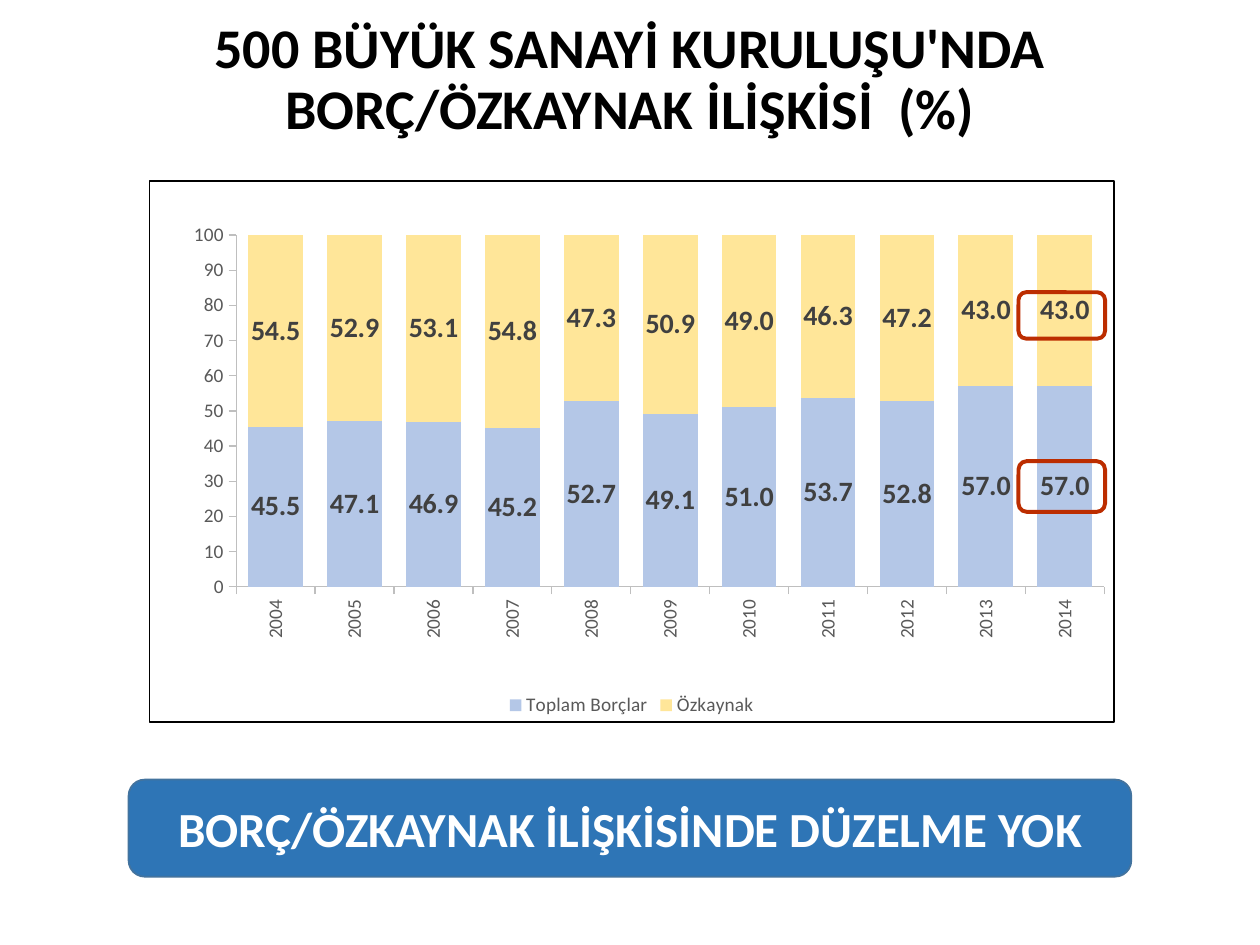
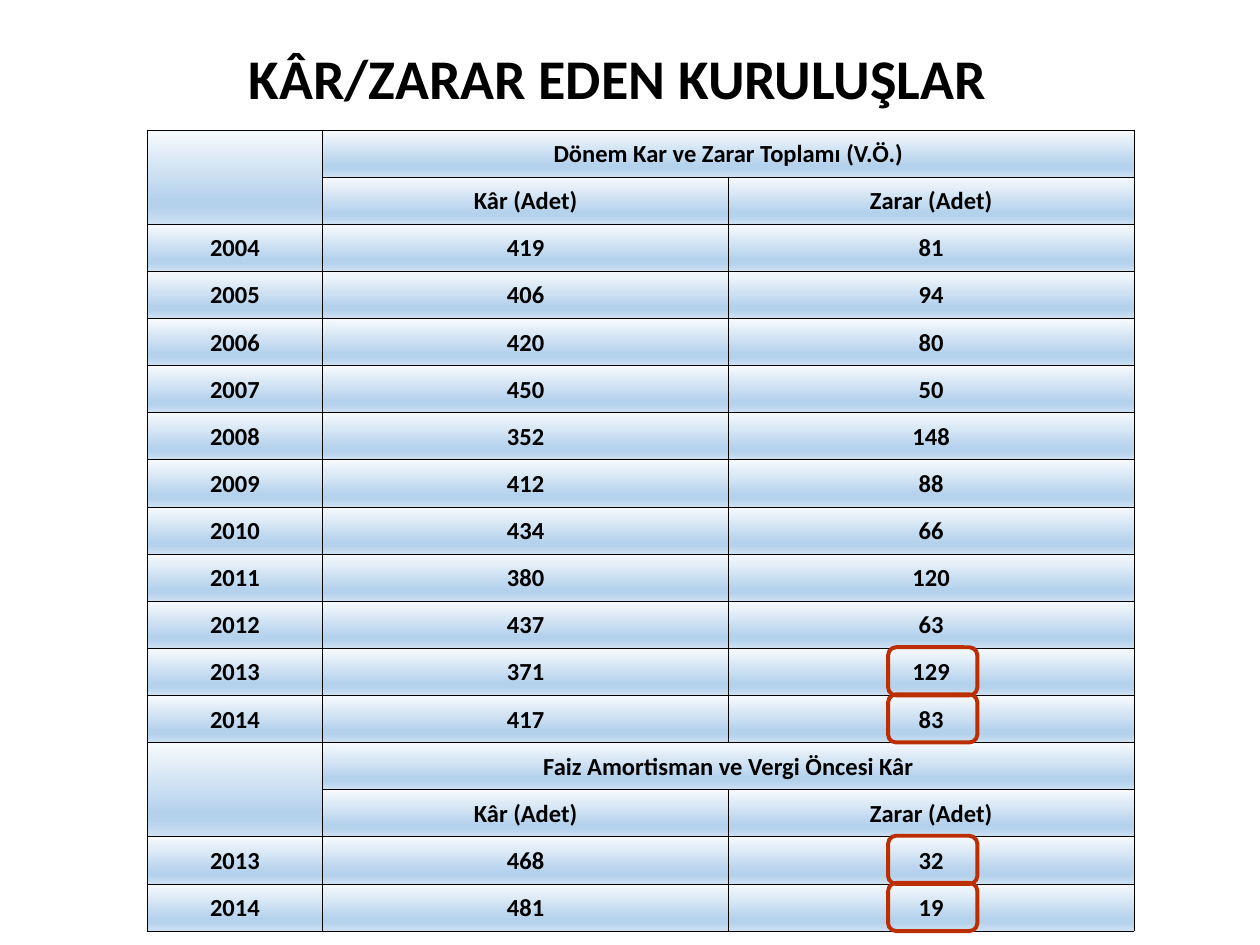
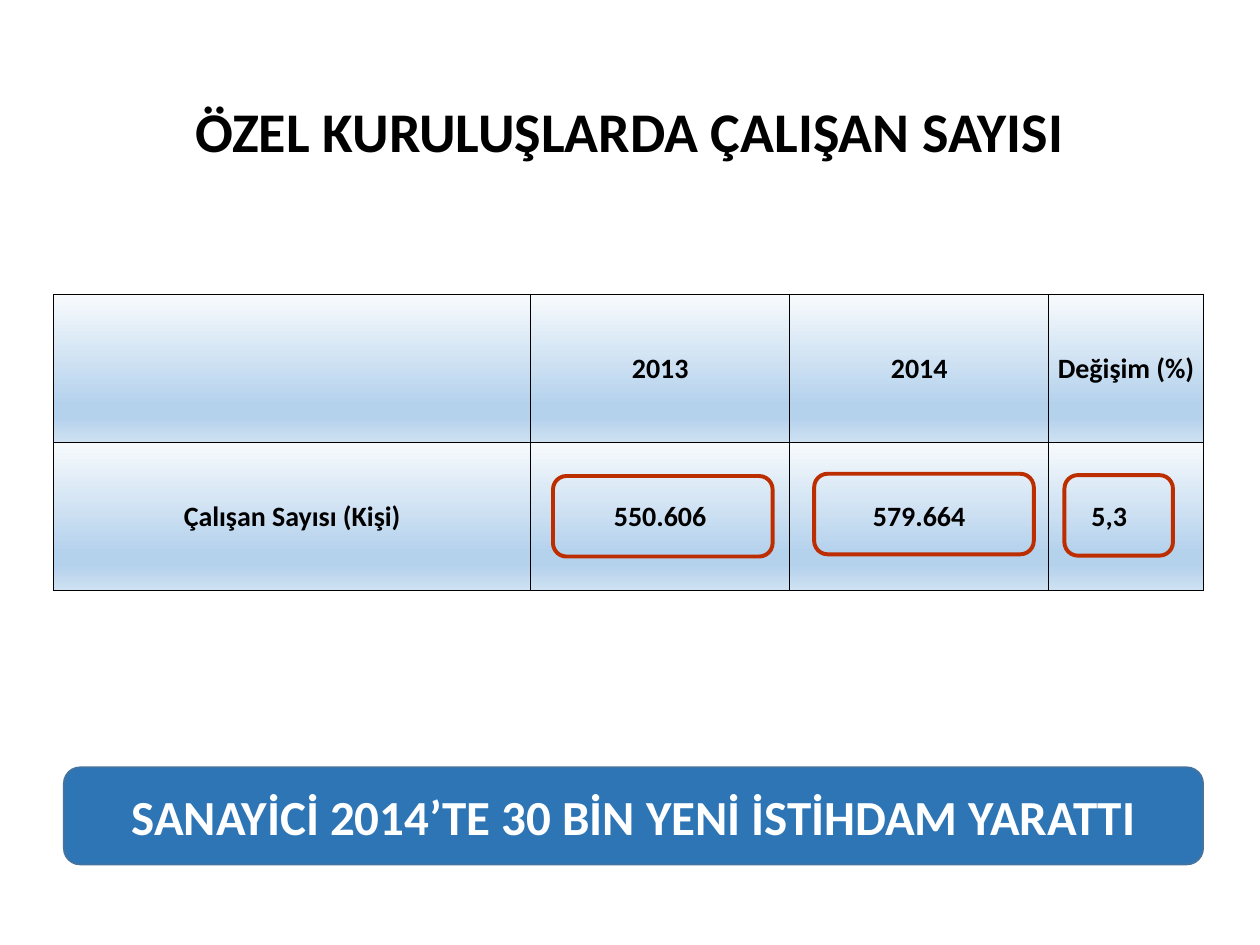
import pptx
import pptx.chart.data
import pptx.dml.color
import pptx.enum.chart
import pptx.enum.shapes
import pptx.enum.text
import pptx.oxml
import pptx.oxml.ns
import pptx.util

Pt = pptx.util.Pt
FONT = "Calibri"
BLACK, WHITE = "000000", "FFFFFF"
BANNER, BANNER_LINE = "2E75B6", "43739E"
HIGHLIGHT = "BC2D00"
AXIS_TEXT, AXIS_LINE, LABEL_TEXT = "595959", "BFBFBF", "404040"
DEBT, EQUITY = "B4C7E7", "FFE699"
CELL_STOPS = [(0, "F7FAFD"), (74, "B5D2EC"), (83, "B5D2EC"), (100, "CEE1F2")]
MIDDLE = pptx.enum.text.MSO_ANCHOR.MIDDLE

DEBT_SHARES = [45.5, 47.1, 46.9, 45.2, 52.7, 49.1, 51.0, 53.7, 52.8, 57.0, 57.0]
EQUITY_SHARES = [54.5, 52.9, 53.1, 54.8, 47.3, 50.9, 49.0, 46.3, 47.2, 43.0, 43.0]
COUNT_HEADER = ["", "Kâr (Adet)", "Zarar (Adet)"]
PROFIT_LOSS = [
    ["", "Dönem Kar ve Zarar Toplamı (V.Ö.)", ""],
    COUNT_HEADER,
    ["2004", "419", "81"],
    ["2005", "406", "94"],
    ["2006", "420", "80"],
    ["2007", "450", "50"],
    ["2008", "352", "148"],
    ["2009", "412", "88"],
    ["2010", "434", "66"],
    ["2011", "380", "120"],
    ["2012", "437", "63"],
    ["2013", "371", "129"],
    ["2014", "417", "83"],
    ["", "Faiz Amortisman ve Vergi Öncesi Kâr", ""],
    COUNT_HEADER,
    ["2013", "468", "32"],
    ["2014", "481", "19"],
]
EMPLOYEES = [
    ["", "2013", "2014", "Değişim (%)"],
    ["Çalışan Sayısı (Kişi)", "550.606", "579.664", "5,3"],
]


def rgb(color):
    return pptx.dml.color.RGBColor.from_string(color)


def set_font(font, size, color, bold=False):
    font.name, font.size, font.bold = FONT, Pt(size), bold
    font.color.rgb = rgb(color)


def write(tf, text, size=14, color=BLACK, bold=True, spacing=None):
    """Fill a text frame with one centred paragraph."""
    p = tf.paragraphs[0]
    p.alignment = pptx.enum.text.PP_ALIGN.CENTER
    p.line_spacing = spacing
    r = p.add_run()
    r.text = text
    set_font(r.font, size, color, bold)


def add_titled_slide(prs, text, box, spacing=0.9):
    s = prs.slides.add_slide(prs.slide_layouts[5])
    title = s.shapes.title
    title.left, title.top, title.width, title.height = map(Pt, box)
    tf = title.text_frame
    tf.word_wrap = True
    tf.auto_size = pptx.enum.text.MSO_AUTO_SIZE.NONE
    tf.vertical_anchor = MIDDLE
    write(tf, text, size=32, spacing=spacing)
    return s


def add_round_box(s, box, line, line_width, fill=None):
    sp = s.shapes.add_shape(pptx.enum.shapes.MSO_SHAPE.ROUNDED_RECTANGLE, *map(Pt, box))
    sp.shadow.inherit = False
    sp.line.color.rgb = rgb(line)
    sp.line.width = Pt(line_width)
    if fill:
        sp.fill.solid()
        sp.fill.fore_color.rgb = rgb(fill)
    else:
        sp.fill.background()
    return sp


def add_banner(s, text, box):
    tf = add_round_box(s, box, BANNER_LINE, 1, BANNER).text_frame
    tf.word_wrap = True
    tf.vertical_anchor = MIDDLE
    write(tf, text, size=28, color=WHITE)


def add_highlights(s, origin, frames):
    """Outline frames given relative to the origin of a chart or table."""
    for x, y, w, h in frames:
        add_round_box(s, (origin[0] + x, origin[1] + y, w, h), HIGHLIGHT, 2.25)


def xml(text, *prefixes):
    start, rest = text.split(">", 1)
    slash = "/" if start.endswith("/") else ""
    declarations = pptx.oxml.ns.nsdecls(*prefixes)
    return pptx.oxml.parse_xml(f"{start.rstrip('/')} {declarations}{slash}>{rest}")


def style_cell(cell):
    """Give a cell thin black borders and the shared vertical gradient."""
    tc_pr = cell._tc.get_or_add_tcPr()
    for side in "LRTB":
        tc_pr.append(xml(f'<a:ln{side} w="6350"><a:solidFill><a:srgbClr val="{BLACK}"/>'
                         f'</a:solidFill></a:ln{side}>', "a"))
    stops = "".join(f'<a:gs pos="{pos * 1000}"><a:srgbClr val="{color}"/></a:gs>'
                    for pos, color in CELL_STOPS)
    tc_pr.append(xml(f'<a:gradFill rotWithShape="1"><a:gsLst>{stops}</a:gsLst>'
                     '<a:lin ang="5400000" scaled="0"/></a:gradFill>', "a"))


def add_grid(s, box, rows, col_widths, size):
    table = s.shapes.add_table(len(rows), len(col_widths), *map(Pt, box)).table
    table.first_row = table.horz_banding = False
    for column, width in zip(table.columns, col_widths):
        column.width = Pt(width)
    for row, texts in zip(table.rows, rows):
        row.height = Pt(box[3] / len(rows))
        for cell, text in zip(row.cells, texts):
            cell.margin_left = cell.margin_right = cell.margin_top = Pt(0.7)
            cell.margin_bottom = 0
            cell.vertical_anchor = MIDDLE
            style_cell(cell)
            if text:
                write(cell.text_frame, text, size=size)
    return table


def style_axis(axis):
    axis.has_major_gridlines = False
    axis.major_tick_mark = pptx.enum.chart.XL_TICK_MARK.OUTSIDE
    axis.format.line.color.rgb = rgb(AXIS_LINE)
    axis.format.line.width = Pt(0.75)
    set_font(axis.tick_labels.font, 11, AXIS_TEXT)


def frame_chart(chart, x, y, w, h):
    """Draw the chart border and fix the inner plot area, in fractions."""
    space = chart._chartSpace
    space.chart.addnext(xml(
        '<c:spPr><a:noFill/><a:ln w="9525"><a:solidFill>'
        f'<a:srgbClr val="{BLACK}"/></a:solidFill></a:ln></c:spPr>', "c", "a"))
    plot_area = space.chart.plotArea
    for old in plot_area.findall(pptx.oxml.ns.qn("c:layout")):
        plot_area.remove(old)
    sizes = "".join(f'<c:{key} val="{value}"/>'
                    for key, value in zip("xywh", (x, y, w, h)))
    plot_area.insert(0, xml(
        '<c:layout><c:manualLayout><c:layoutTarget val="inner"/><c:xMode val="edge"/>'
        f'<c:yMode val="edge"/>{sizes}</c:manualLayout></c:layout>', "c"))


def add_share_chart(s, box):
    data = pptx.chart.data.CategoryChartData(number_format="0.0")
    data.categories = [str(year) for year in range(2004, 2015)]
    data.add_series("Toplam Borçlar", DEBT_SHARES)
    data.add_series("Özkaynak", EQUITY_SHARES)
    kind = pptx.enum.chart.XL_CHART_TYPE.COLUMN_STACKED
    chart = s.shapes.add_chart(kind, *map(Pt, box), data).chart
    set_font(chart.font, 14, BLACK)
    chart.has_title = False
    chart.has_legend = True
    chart.legend.position = pptx.enum.chart.XL_LEGEND_POSITION.BOTTOM
    chart.legend.include_in_layout = False
    set_font(chart.legend.font, 11, AXIS_TEXT)

    years, shares = chart.category_axis, chart.value_axis
    style_axis(years)
    style_axis(shares)
    qn = pptx.oxml.ns.qn
    years._element.find(qn("c:txPr")).find(qn("a:bodyPr")).set("rot", "-5400000")
    shares.minimum_scale, shares.maximum_scale, shares.major_unit = 0, 100, 10
    shares.tick_labels.number_format = "0"
    shares.tick_labels.number_format_is_linked = False

    plot = chart.plots[0]
    plot.gap_width, plot.overlap, plot.vary_by_categories = 44, 100, False
    for series, color in zip(plot.series, (DEBT, EQUITY)):
        series.format.fill.solid()
        series.format.fill.fore_color.rgb = rgb(color)
        labels = series.data_labels
        labels.show_value = True
        labels.number_format = "0.0"
        labels.number_format_is_linked = False
        set_font(labels.font, 16, LABEL_TEXT, bold=True)
    frame_chart(chart, 0.09, 0.1, 0.9, 0.65)


def build_debt_slide(prs):
    s = add_titled_slide(prs, "500 BÜYÜK SANAYİ KURULUŞU'NDA BORÇ/ÖZKAYNAK İLİŞKİSİ  (%)",
                         (49.5, 7, 621, 78.5))
    add_banner(s, "BORÇ/ÖZKAYNAK İLİŞKİSİNDE DÜZELME YOK", (73.5, 445.5, 573, 55.5))
    box = (85, 103, 552, 310)
    add_share_chart(s, box)
    add_highlights(s, box, [(497, 160.5, 49.5, 29), (497, 64, 49.5, 26.5)])


def build_profit_slide(prs):
    s = add_titled_slide(prs, "KÂR/ZARAR EDEN KURULUŞLAR", (34.5, 21, 637, 46), spacing=1.0)
    box = (84, 74.25, 564, 458)
    table = add_grid(s, box, PROFIT_LOSS, (100.5, 231.75, 231.75), 14)
    for top in (0, 13):
        table.cell(top, 0).merge(table.cell(top + 1, 0))
        table.cell(top, 1).merge(table.cell(top, 2))
    row_height = box[3] / len(PROFIT_LOSS)
    add_highlights(s, box, [(423.5, row * row_height - 0.75, 51, 27.5)
                            for row in (11, 12, 15, 16)])


def build_employee_slide(prs):
    s = add_titled_slide(prs, "ÖZEL KURULUŞLARDA ÇALIŞAN SAYISI", (36.5, 32.5, 646.5, 88.5))
    add_banner(s, "SANAYİCİ 2014’TE 30 BİN YENİ İSTİHDAM YARATTI", (36.5, 438.5, 651, 55.5))
    box = (30.75, 168.5, 657, 169)
    table = add_grid(s, box, EMPLOYEES, (272.5, 148, 148, 88.5), 16)
    table.cell(1, 3).margin_right = Pt(20)
    add_highlights(s, box, [(285.25, 103.5, 125.5, 46), (434.5, 102.25, 125.5, 46),
                            (577.5, 103, 62, 46)])


def main():
    prs = pptx.Presentation()
    prs.slide_width, prs.slide_height = Pt(720), Pt(540)
    build_debt_slide(prs)
    build_profit_slide(prs)
    build_employee_slide(prs)
    prs.save("out.pptx")


if __name__ == "__main__":
    main()
